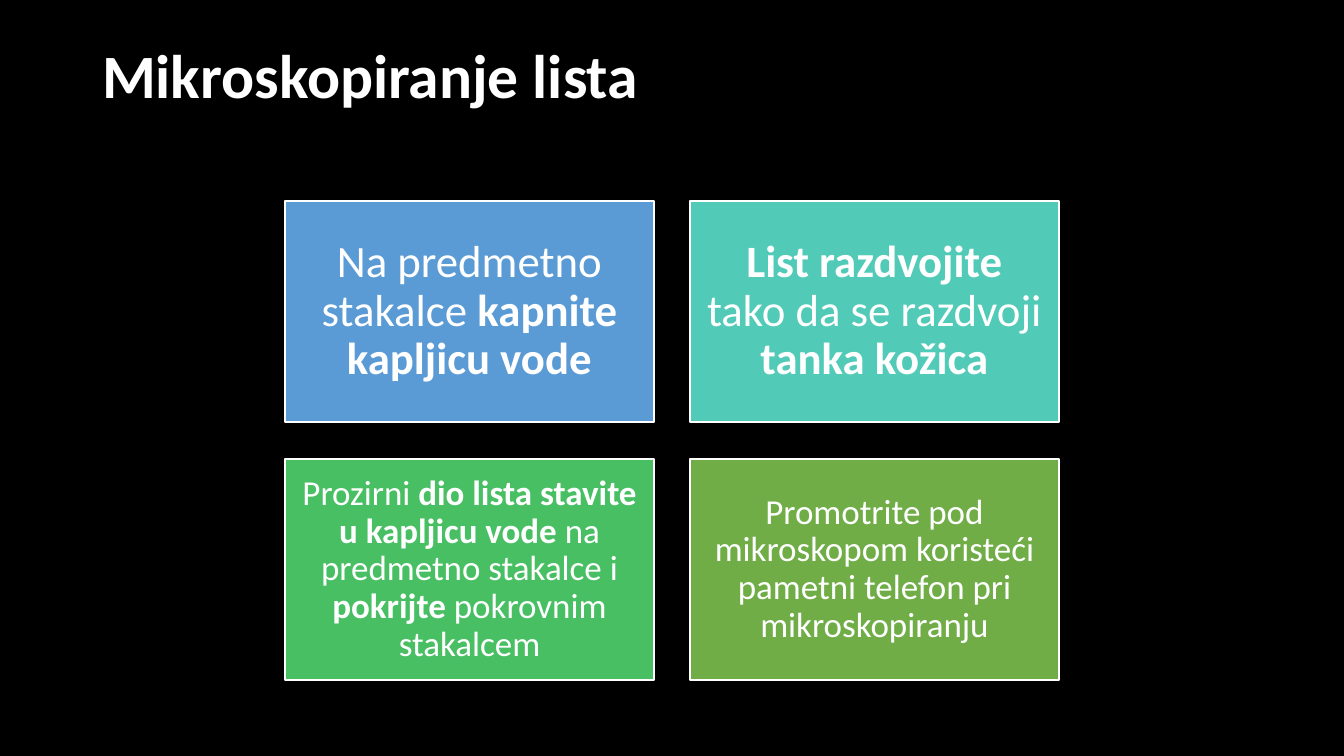
"""Build the slide "Mikroskopiranje lista" with its four step boxes."""
import pptx
import pptx.util
import pptx.dml.color
import pptx.enum.shapes
import pptx.enum.text

EMU_PER_PX = 12192000 / 1344
PP_ALIGN = pptx.enum.text.PP_ALIGN
ANCHOR = pptx.enum.text.MSO_ANCHOR


def px(n):
    return pptx.util.Emu(round(n * EMU_PER_PX))


def paint(color, value):
    color.rgb = pptx.dml.color.RGBColor.from_string(value)


prs = pptx.Presentation()
prs.slide_width, prs.slide_height = px(1344), px(756)
s = prs.slides.add_slide(prs.slide_layouts[5])
s.background.fill.solid()
paint(s.background.fill.fore_color, "000000")

title = s.shapes.title
title.left, title.top, title.width, title.height = px(92), px(40), px(1159), px(146)

steps = [
    ("5B9BD5", 32, 13, [("Na predmetno stakalce ", False), ("kapnite kapljicu vode", True)]),
    ("52CAB8", 32, 13, [("List razdvojite", True), (" tako da se razdvoji ", False),
                        ("tanka kožica", True)]),
    ("49BF64", 25, 10, [("Prozirni ", False), ("dio lista stavite u kapljicu vode ", True),
                        ("na predmetno stakalce i ", False), ("pokrijte", True),
                        (" pokrovnim stakalcem", False)]),
    ("70AD47", 25, 10, [("Promotrite pod mikroskopom koristeći pametni telefon pri mikroskopiranju",
                         False)]),
]

texts = [(title, 44, PP_ALIGN.LEFT, [("Mikroskopiranje lista", True)],
          {"vertical_anchor": ANCHOR.TOP})]
for i, (fill, size, inset, runs) in enumerate(steps):
    row, col = divmod(i, 2)
    sp = s.shapes.add_shape(pptx.enum.shapes.MSO_SHAPE.RECTANGLE,
                            px(285 + 405 * col), px(201 + 258 * row), px(369), px(221))
    sp.shadow.inherit = False
    sp.fill.solid()
    paint(sp.fill.fore_color, fill)
    paint(sp.line.color, "FFFFFF")
    sp.line.width = pptx.util.Pt(1)
    frame = {f"margin_{side}": px(inset) for side in ("left", "top", "right", "bottom")}
    frame["vertical_anchor"] = ANCHOR.MIDDLE
    texts.append((sp, size, PP_ALIGN.CENTER, runs, frame))

for sp, size, align, runs, frame in texts:
    tf = sp.text_frame
    frame.update(word_wrap=True, auto_size=pptx.enum.text.MSO_AUTO_SIZE.NONE)
    for name, value in frame.items():
        setattr(tf, name, value)
    p = tf.paragraphs[0]
    p.alignment = align
    p.line_spacing = 0.9
    for text, bold in runs:
        r = p.add_run()
        r.text = text
        font = {"name": "Calibri", "size": pptx.util.Pt(size), "bold": bold}
        for name, value in font.items():
            setattr(r.font, name, value)
        paint(r.font.color, "FFFFFF")

prs.save("out.pptx")
